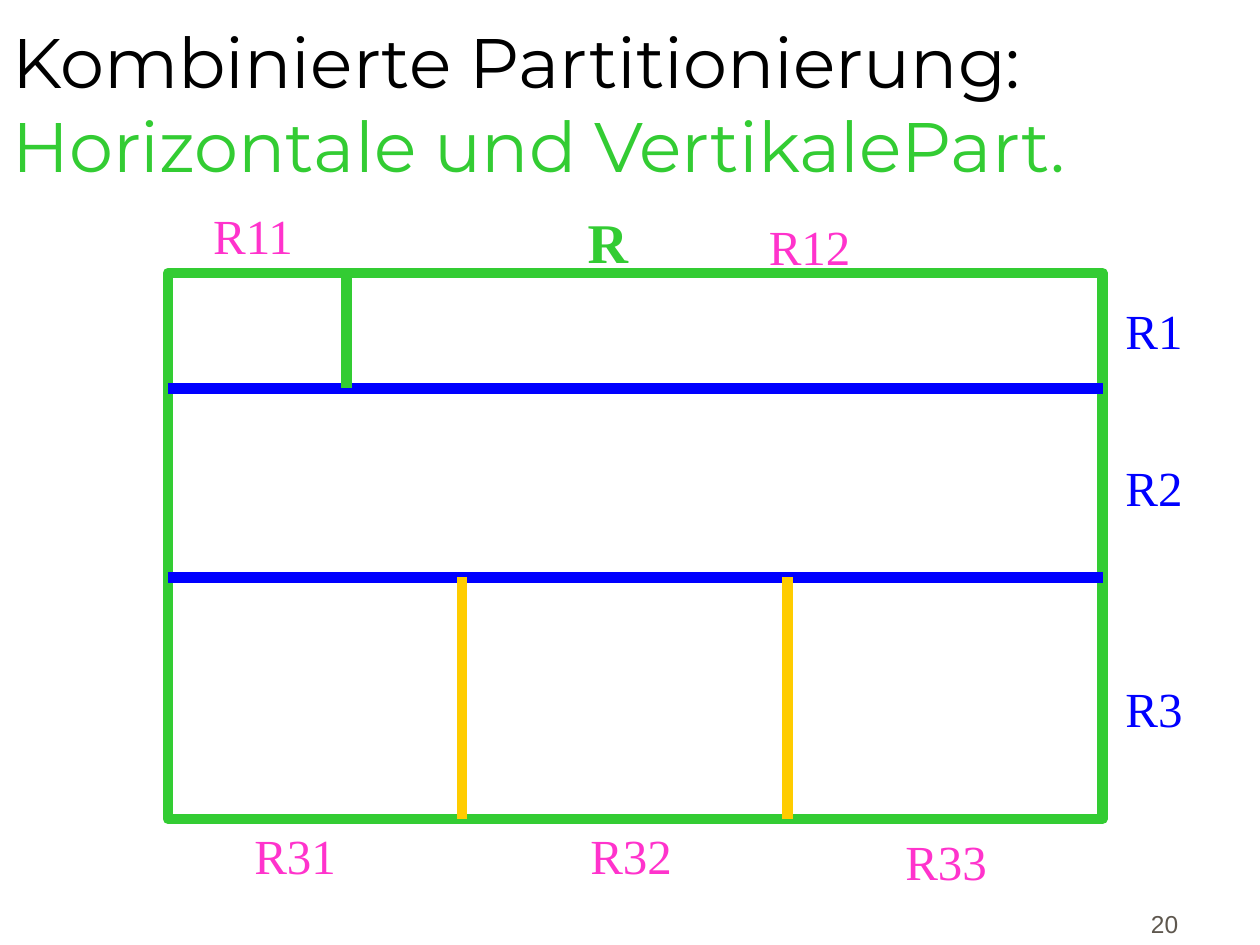
from lxml import etree
from pptx import Presentation
from pptx.dml.color import RGBColor
from pptx.enum.shapes import MSO_CONNECTOR, MSO_SHAPE
from pptx.enum.text import MSO_ANCHOR, MSO_AUTO_SIZE, PP_ALIGN
from pptx.oxml.ns import qn
from pptx.util import Inches, Pt

BLACK = RGBColor(0x00, 0x00, 0x00)
WHITE = RGBColor(0xFF, 0xFF, 0xFF)
GREEN = RGBColor(0x33, 0xCC, 0x33)
BLUE = RGBColor(0x00, 0x00, 0xFF)
YELLOW = RGBColor(0xFF, 0xCC, 0x00)
PINK = RGBColor(0xFF, 0x33, 0xCC)
GREY = RGBColor(0x5E, 0x57, 0x4E)

LEFT, CENTER, RIGHT = PP_ALIGN.LEFT, PP_ALIGN.CENTER, PP_ALIGN.RIGHT
MIDDLE, BOTTOM = MSO_ANCHOR.MIDDLE, MSO_ANCHOR.BOTTOM
FIT_SHAPE = MSO_AUTO_SIZE.SHAPE_TO_FIT_TEXT
RECTANGLE, STRAIGHT = MSO_SHAPE.RECTANGLE, MSO_CONNECTOR.STRAIGHT

# Grid of 120 columns by 90 rows: twelve cells to the inch
CELL = Inches(1) // 12
RELATION_LEFT, RELATION_RIGHT = 16, 105
RELATION_TOP, RELATION_BOTTOM = 26, 78
R1_END, R2_END = 37, 55


def add_run(paragraph, text, size, color, font="Times New Roman", bold=False):
    run = paragraph.add_run()
    run.text = text
    run.font.name = font
    run.font.size = Pt(size)
    run.font.bold = bold
    run.font.color.rgb = color


class PartitionSlide:
    """Current slide and its style; all lengths are grid cells."""

    line_width = Pt(6)

    def __init__(self, presentation):
        self.slide = presentation.slides.add_slide(presentation.slide_layouts[6])

    def text(self, left, top, width, height, runs, align=LEFT, anchor=BOTTOM,
             wrap=True):
        box = self.slide.shapes.add_textbox(
            *(round(n * CELL) for n in (left, top, width, height)))
        frame = box.text_frame
        frame.word_wrap = wrap
        frame.vertical_anchor = anchor
        paragraph = frame.paragraphs[0]
        paragraph.alignment = align
        for text, style in runs:
            add_run(paragraph, text, **style)
        return frame

    def label(self, left, top, text, color, size=28, width=10.2, height=6.8,
              bold=False):
        style = dict(size=size, color=color, bold=bold)
        frame = self.text(left, top, width, height, [(text, style)],
                          CENTER, MIDDLE, wrap=False)
        frame.auto_size = FIT_SHAPE

    def frame(self, left, top, right, bottom, color):
        box = self.slide.shapes.add_shape(
            RECTANGLE, left * CELL, top * CELL,
            (right - left) * CELL, (bottom - top) * CELL)
        box.shadow.inherit = False
        box.fill.solid()
        box.fill.fore_color.rgb = WHITE
        box.line.color.rgb = color
        box.line.width = self.line_width

    def line(self, x1, y1, x2, y2, color):
        divider = self.slide.shapes.add_connector(
            STRAIGHT, x1 * CELL, y1 * CELL, x2 * CELL, y2 * CELL)
        divider.line.color.rgb = color
        divider.line.width = self.line_width
        etree.SubElement(divider._element.spPr, qn("a:effectLst"))


def main():
    presentation = Presentation()
    presentation.slide_width = Inches(10)
    presentation.slide_height = Inches(7.5)
    page = PartitionSlide(presentation)

    # Title and page number
    title_font = "Montserrat"
    title = page.text(0, 3, 120, 15, [
        ("Kombinierte Partitionierung:", dict(size=40, color=BLACK, font=title_font)),
        (" ", dict(size=36, color=BLACK, font=title_font)),
        ("Horizontale und VertikalePart.", dict(size=40, color=GREEN, font=title_font)),
    ])
    title.margin_bottom = Inches(0.02)
    page.text(101.6, 84, 11.8, 6,
              [("20", dict(size=14, color=GREY, font="Arial"))], RIGHT)

    # Relation R
    page.frame(RELATION_LEFT, RELATION_TOP, RELATION_RIGHT, RELATION_BOTTOM, GREEN)
    page.label(54.8, 19.2, "R", GREEN, size=32, width=6.2, height=7.6, bold=True)

    # Horizontal partitions
    for row in (R1_END, R2_END):
        page.line(RELATION_LEFT, row, RELATION_RIGHT, row, BLUE)
    for text, row in (("R1", 28), ("R2", 43), ("R3", 64)):
        page.label(106, row, text, BLUE, width=7.8)

    # Vertical partitions of R1 and R3
    page.line(33, RELATION_TOP, 33, R1_END, GREEN)
    for column in (44, 75):
        page.line(column, R2_END, column, RELATION_BOTTOM, YELLOW)
    for text, column, row in (("R11", 19, 19), ("R12", 72, 20), ("R31", 23, 78),
                              ("R32", 55, 78), ("R33", 85, 78.6)):
        page.label(column, row, text, PINK)

    presentation.save("out.pptx")


if __name__ == "__main__":
    main()
